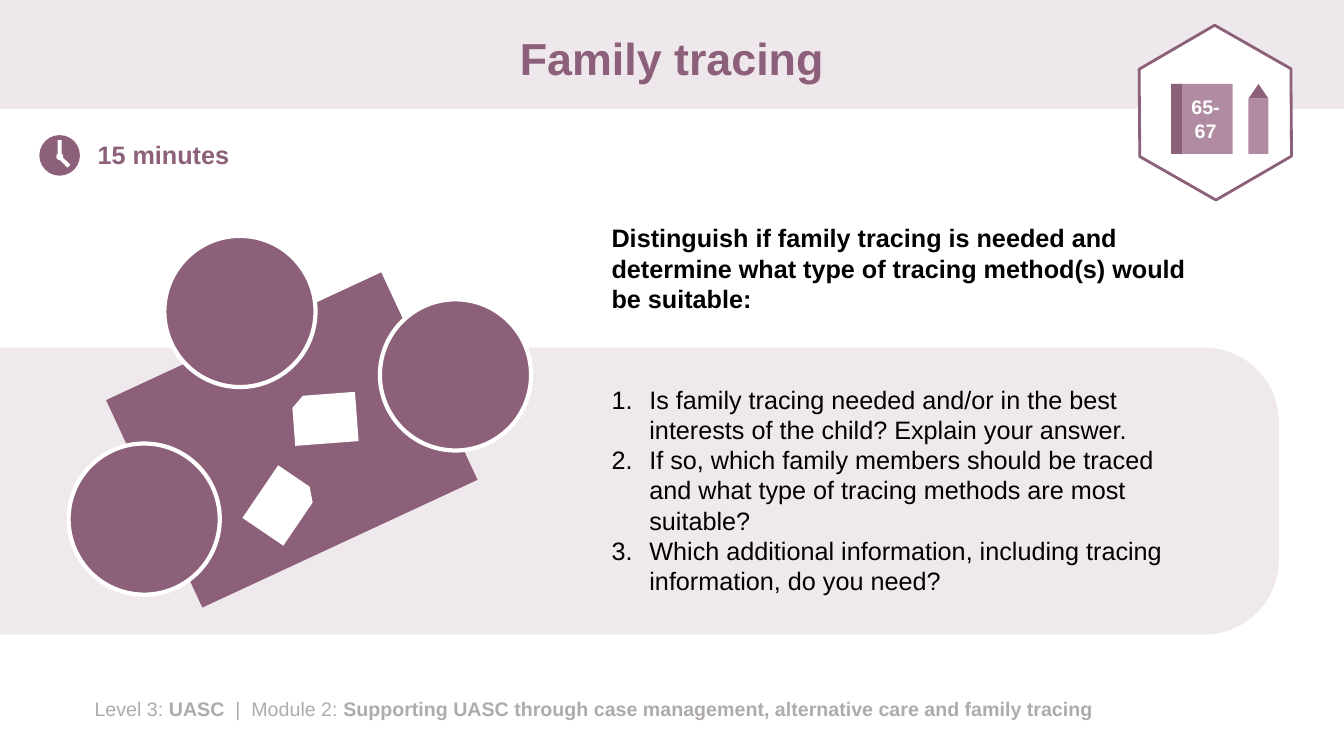
import pptx
import pptx.util
import pptx.dml.color
import pptx.enum.shapes
import pptx.enum.text
import pptx.oxml.ns
import lxml.etree

Pt = pptx.util.Pt
RGBColor = pptx.dml.color.RGBColor
SHAPE = pptx.enum.shapes.MSO_SHAPE
ANCHOR = pptx.enum.text.MSO_ANCHOR
ALIGN = pptx.enum.text.PP_ALIGN

PLUM = RGBColor(0x8D, 0x60, 0x7A)
TITLE_PLUM = RGBColor(0x8C, 0x5F, 0x7A)
MAUVE = RGBColor(0xB0, 0x8B, 0xA1)
BAND = RGBColor(0xEE, 0xE7, 0xEB)
PANEL = RGBColor(0xEF, 0xE8, 0xEC)
GREY = RGBColor(0xAF, 0xAB, 0xAB)
WHITE = RGBColor(0xFF, 0xFF, 0xFF)
BLACK = RGBColor(0, 0, 0)

deck = pptx.Presentation()
deck.slide_width = Pt(960)
deck.slide_height = Pt(540)
page = deck.slides.add_slide(deck.slide_layouts[5])


def add_box(kind, left, top, width, height, fill, rotation=0, line=None, weight=0):
    box = page.shapes.add_shape(kind, Pt(left), Pt(top), Pt(width), Pt(height))
    box.shadow.inherit = False
    box.rotation = rotation
    box.fill.solid()
    box.fill.fore_color.rgb = fill
    if line is None:
        box.line.fill.background()
    else:
        box.line.color.rgb = line
        box.line.width = Pt(weight)
    return box


def add_text(left, top, width, height, paragraphs, size, color):
    box = page.shapes.add_textbox(Pt(left), Pt(top), Pt(width), Pt(height))
    frame = box.text_frame
    frame.word_wrap = True
    for index, spans in enumerate(paragraphs):
        para = frame.paragraphs[0] if index == 0 else frame.add_paragraph()
        for text, bold in spans:
            span = para.add_run()
            span.text = text
            span.font.name = "Arial"
            span.font.size = Pt(size)
            span.font.bold = bold
            span.font.color.rgb = color
    return box


title = page.shapes.title
header = add_box(SHAPE.RECTANGLE, 0, 0, 960, 77.8, BAND)
title.element.addprevious(header.element)
title.left, title.top, title.width, title.height = Pt(66), Pt(9.4), Pt(828), Pt(68.4)
title.text_frame.text = "Family tracing"
title.text_frame.vertical_anchor = ANCHOR.MIDDLE
heading = title.text_frame.paragraphs[0]
heading.alignment = ALIGN.CENTER
heading.line_spacing = 0.9
heading.runs[0].font.name = "Arial"
heading.runs[0].font.size = Pt(32)
heading.runs[0].font.bold = True
heading.runs[0].font.color.rgb = TITLE_PLUM

add_text(60.5, 494.6, 817, 24.5, [[
    ("Level 3: ", False),
    ("UASC", True),
    ("  |  Module 2: ", False),
    ("Supporting UASC through case management, alternative care and family tracing", True),
]], 14, GREY)

badge = add_box(SHAPE.HEXAGON, 805.5, 26.5, 125.3, 108, WHITE, 29.7, PLUM, 2)
badge.adjustments[0] = 0.29
book = add_box(SHAPE.RECTANGLE, 841.7, 60, 38.9, 49.9, MAUVE)
frame = book.text_frame
frame.text = "65-67"
frame.word_wrap = True
frame.vertical_anchor = ANCHOR.MIDDLE
frame.paragraphs[0].alignment = ALIGN.CENTER
pages = frame.paragraphs[0].runs[0].font
pages.name = "Arial"
pages.size = Pt(14)
pages.bold = True
pages.color.rgb = WHITE
add_box(SHAPE.RECTANGLE, 836.5, 60, 7.8, 49.9, PLUM)
add_box(SHAPE.ISOSCELES_TRIANGLE, 891.8, 60, 14.3, 10.4, PLUM)
add_box(SHAPE.RECTANGLE, 891.8, 70.4, 14.3, 39.5, MAUVE)

add_text(62.6, 95.8, 123.1, 29, [[("15 minutes", True)]], 18, PLUM)
add_box(SHAPE.OVAL, 28.1, 96.5, 29, 29, PLUM)
add_box(SHAPE.OVAL, 40.2, 109.4, 5, 5, WHITE)
add_box(SHAPE.RECTANGLE, 36.8, 104.4, 11.5, 2.9, WHITE, 270)
add_box(SHAPE.RECTANGLE, 42.4, 114.4, 8, 2.9, WHITE, 224.2)

panel = add_box(SHAPE.ROUND_2_SAME_RECTANGLE, 354.2, -106, 205, 913.6, PANEL, 90)
panel.adjustments[0] = 0.26
panel.adjustments[1] = 0

add_box(SHAPE.RECTANGLE, 100.1, 232.6, 216.7, 163.4, PLUM, 335.1)
for left, top in [(49, 316.8), (117.4, 168.5), (271.4, 213.8)]:
    add_box(SHAPE.OVAL, left, top, 108, 108, PLUM, 335.1, WHITE, 3)
for left, top, rotation in [(182.9, 338.4, 34.2), (214.6, 276.5, 265.7)]:
    paper = add_box(SHAPE.SNIP_1_RECTANGLE, left, top, 35.3, 45.4, WHITE, rotation)
    paper.adjustments[0] = 0.23

add_text(429.8, 155.5, 429.1, 72.7, [[(
    "Distinguish if family tracing is needed and determine what type of "
    "tracing method(s) would be suitable:", True)]], 18, BLACK)

questions = [
    "Is family tracing needed and/or in the best interests of the child? Explain your answer.",
    "If so, which family members should be traced and what type of tracing methods are most suitable?",
    "Which additional information, including tracing information, do you need?",
]
question_box = add_text(429.8, 270.7, 429.1, 159.8,
                        [[(question, False)] for question in questions], 18, BLACK)
for para in question_box.text_frame.paragraphs:
    properties = para._p.get_or_add_pPr()
    properties.set("marL", str(Pt(27)))
    properties.set("indent", str(-Pt(27)))
    numbering = lxml.etree.SubElement(properties, pptx.oxml.ns.qn("a:buAutoNum"))
    numbering.set("type", "arabicPeriod")

deck.save("out.pptx")
